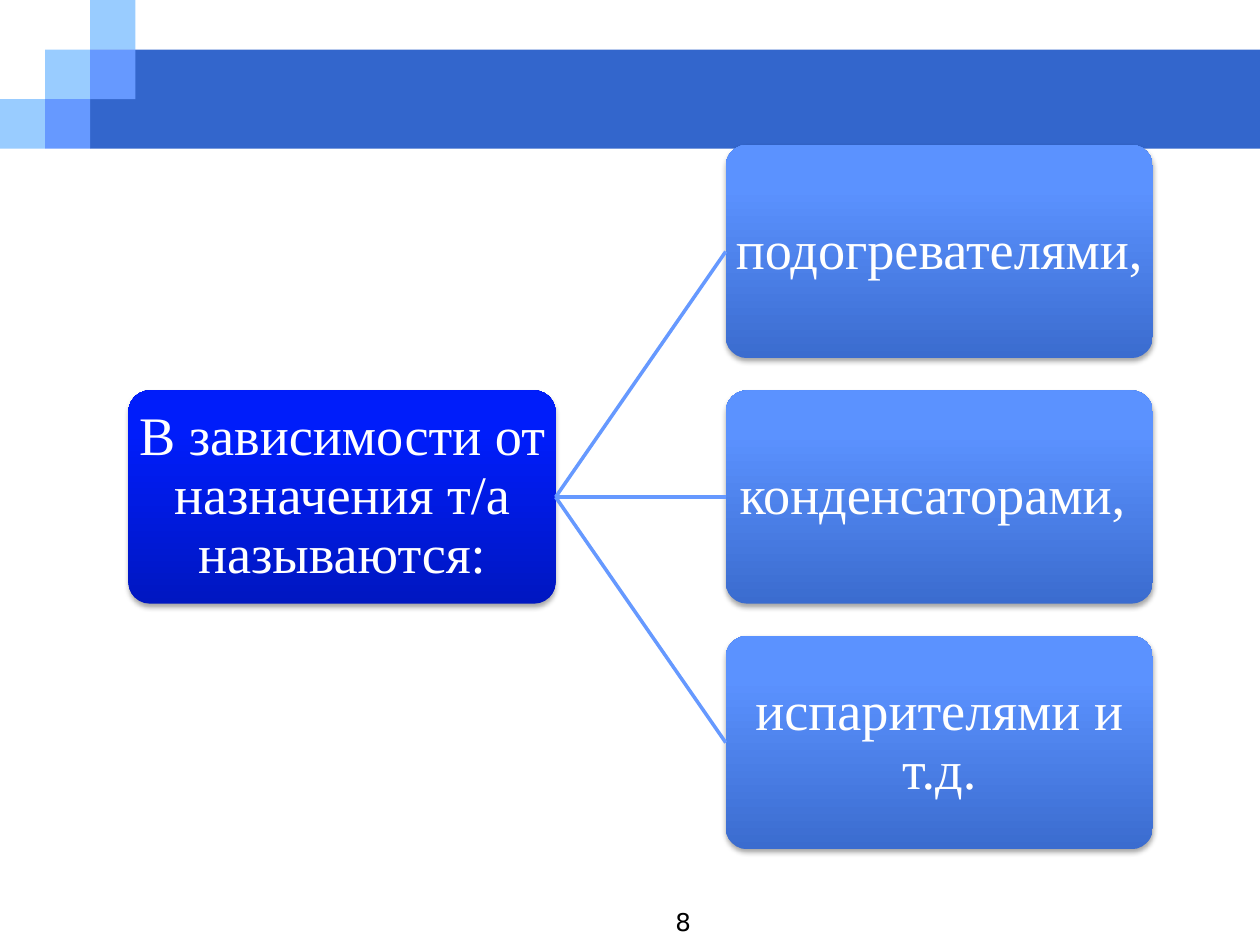
from lxml.etree import SubElement
from pptx import Presentation
from pptx.dml.color import RGBColor
from pptx.enum.shapes import MSO_CONNECTOR, MSO_SHAPE
from pptx.enum.text import MSO_ANCHOR, PP_ALIGN
from pptx.oxml.ns import qn
from pptx.util import Cm, Pt

COLORS = {
    "band": "3366CC",
    "light": "99CCFF",
    "mid": "6699FF",
    "white": "FFFFFF",
    "black": "000000",
}
ROOT_GRADIENT = [(0, "0017C1"), (80, "001DFA"), (100, "001EFB")]
CHILD_GRADIENT = [(0, "3B6CCF"), (80, "5B92FF"), (100, "5D93FF")]

SLIDE_W, SLIDE_H = 25.4, 19.05
TILE_W, TILE_H = 0.91, 1.0
BOX_W, BOX_H = 8.61, 4.3
ROOT_X, CHILD_X = 2.59, 14.63
TOP_Y, PITCH = 2.92, 4.95


def rgb(name):
    return RGBColor.from_string(COLORS[name])


class SlideBuilder:
    font = "Times New Roman"
    size = 31

    def __init__(self, s):
        self.s = s

    def block(self, x, y, w, h, color):
        sp = self.s.shapes.add_shape(MSO_SHAPE.RECTANGLE, Cm(x), Cm(y), Cm(w), Cm(h))
        sp.shadow.inherit = False
        sp.fill.solid()
        sp.fill.fore_color.rgb = rgb(color)
        sp.line.fill.background()

    def box(self, x, y, text, stops):
        sp = self.s.shapes.add_shape(
            MSO_SHAPE.ROUNDED_RECTANGLE, Cm(x), Cm(y), Cm(BOX_W), Cm(BOX_H))
        sp.adjustments[0] = 0.1
        sp.line.fill.background()
        self.gradient(sp, stops)
        self.soft_shadow(sp)
        tf = sp.text_frame
        tf.word_wrap = True
        tf.vertical_anchor = MSO_ANCHOR.MIDDLE
        tf.margin_left = tf.margin_right = tf.margin_top = tf.margin_bottom = 0
        self.add_text(tf, text, PP_ALIGN.CENTER, self.font, self.size, "white")
        tf.paragraphs[0].line_spacing = 0.9
        return sp

    def gradient(self, sp, stops):
        """Fill from bottom to top with (percent, hex) stops."""
        sp.fill.gradient()
        sp.fill.gradient_angle = 90
        gs_list = sp._element.spPr.find(qn("a:gradFill")).find(qn("a:gsLst"))
        for gs in list(gs_list):
            gs_list.remove(gs)
        for percent, color in stops:
            gs = SubElement(gs_list, qn("a:gs"), pos=str(percent * 1000))
            SubElement(gs, qn("a:srgbClr"), val=color)

    def soft_shadow(self, sp):
        sp.shadow.inherit = False
        effects = sp._element.spPr.find(qn("a:effectLst"))
        shadow = SubElement(
            effects, qn("a:outerShdw"), blurRad=str(Pt(3.1)), dist=str(Pt(1.8)),
            dir="5400000", rotWithShape="0")
        color = SubElement(shadow, qn("a:srgbClr"), val=COLORS["black"])
        SubElement(color, qn("a:alpha"), val="35000")

    def link(self, start, end):
        """Join the right side of start to the left side of end."""
        c = self.s.shapes.add_connector(MSO_CONNECTOR.STRAIGHT, 0, 0, 0, 0)
        c.begin_connect(start, 3)
        c.end_connect(end, 1)
        c.line.color.rgb = rgb("mid")
        c.line.width = Pt(2)
        SubElement(c._element.spPr, qn("a:effectLst"))

    def page_number(self, text):
        tb = self.s.shapes.add_textbox(Cm(8.26), Cm(18.16), Cm(5.92), Cm(0.89))
        tb.text_frame.word_wrap = True
        self.add_text(tb.text_frame, text, PP_ALIGN.RIGHT, "DejaVu Sans", 14, "black")

    def add_text(self, tf, text, align, font, size, color):
        p = tf.paragraphs[0]
        p.alignment = align
        r = p.add_run()
        r.text = text
        r.font.name = font
        r.font.size = Pt(size)
        r.font.color.rgb = rgb(color)


def main():
    prs = Presentation()
    prs.slide_width, prs.slide_height = Cm(SLIDE_W), Cm(SLIDE_H)
    b = SlideBuilder(prs.slides.add_slide(prs.slide_layouts[6]))

    band_x = 2 * TILE_W
    b.block(band_x, TILE_H, SLIDE_W - band_x, 2 * TILE_H, "band")
    tiles = {"light": [(0, 2), (1, 1), (2, 0)], "mid": [(2, 1), (1, 2)]}
    for color, cells in tiles.items():
        for col, row in cells:
            b.block(col * TILE_W, row * TILE_H, TILE_W, TILE_H, color)

    root = b.box(ROOT_X, TOP_Y + PITCH,
                 "В зависимости от назначения т/а называются:", ROOT_GRADIENT)
    kinds = ["подогревателями, ", "конденсаторами, ", "испарителями и т.д."]
    for i, kind in enumerate(kinds):
        child = b.box(CHILD_X, TOP_Y + i * PITCH, kind, CHILD_GRADIENT)
        b.link(root, child)

    b.page_number("8")
    prs.save("out.pptx")


if __name__ == "__main__":
    main()
